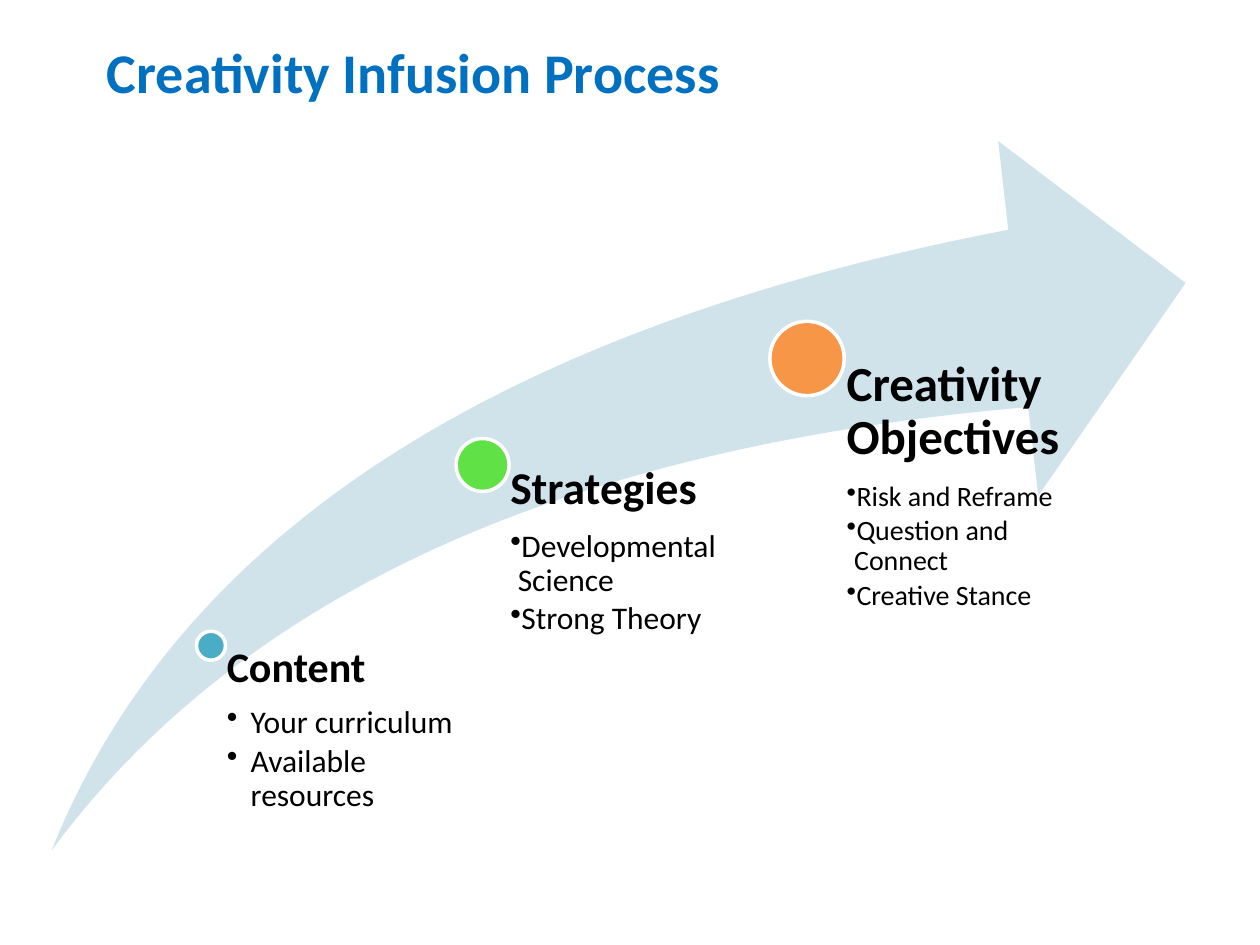
from dataclasses import dataclass

from lxml.etree import SubElement
from pptx import Presentation
from pptx.dml.color import RGBColor
from pptx.enum.shapes import MSO_SHAPE
from pptx.enum.text import MSO_AUTO_SIZE
from pptx.oxml.ns import qn
from pptx.util import Emu, Pt

PX = 9144  # EMU in one px, at 100 px to the inch
TEXT_BOTTOM = 675


@dataclass(frozen=True)
class Theme:
    font: str = "Calibri"
    title: str = "0070C0"
    text: str = "000000"
    arrow: str = "D0E3EA"
    outline: str = "FFFFFF"
    title_size: int = 32
    outline_width: int = 2


@dataclass(frozen=True)
class Stage:
    heading: str
    bullets: tuple[str, ...]
    left: int
    top: int
    diameter: int
    color: str
    text_width: int
    inset: int
    indent: int
    heading_size: int
    bullet_size: int


THEME = Theme()
STAGES = (
    Stage("Content", ("Your curriculum", "Available resources"),
          156, 501, 23, "4BACC6", 210, 12, 19, 24, 18),
    Stage("Strategies", ("Developmental Science", "Strong Theory"),
          362, 348, 42, "60E146", 216, 22, 6, 26, 18),
    Stage("Creativity Objectives",
          ("Risk and Reframe", "Question and Connect", "Creative Stance"),
          611, 255, 59, "F79646", 216, 31, 6, 28, 16),
)


def px(length: int) -> Emu:
    return Emu(length * PX)


def add_text(paragraph, text: str, *, size: int, color: str = THEME.text,
             bold: bool = False, space_after: int | None = None,
             indent: int | None = None) -> None:
    """Write one paragraph; space_after is a percentage, indent adds a bullet."""
    properties = paragraph._p.get_or_add_pPr()
    if space_after is not None:
        paragraph.line_spacing = 0.9
        paragraph.space_before = Pt(0)
        paragraph.space_after = Pt(0)
        spacing = properties.find(qn("a:spcAft"))
        spacing.clear()
        SubElement(spacing, qn("a:spcPct"), val=str(space_after * 1000))
    if indent is not None:
        paragraph.level = 1
        properties.set("marL", str(px(indent)))
        properties.set("indent", str(-px(indent)))
        SubElement(properties, qn("a:buChar"), char="•")
    run = paragraph.add_run()
    run.text = text
    run.font.name = THEME.font
    run.font.size = Pt(size)
    run.font.bold = bold
    run.font.color.rgb = RGBColor.from_string(color)


def add_filled_shape(slide, kind: MSO_SHAPE, left: int, top: int,
                     width: int, height: int, color: str):
    shape = slide.shapes.add_shape(kind, px(left), px(top), px(width), px(height))
    shape.shadow.inherit = False
    shape.fill.solid()
    shape.fill.fore_color.rgb = RGBColor.from_string(color)
    shape.line.fill.background()
    return shape


def add_title(slide, text: str) -> None:
    frame = slide.shapes.add_textbox(px(75), px(25), px(511), px(64)).text_frame
    frame.word_wrap = False
    frame.auto_size = MSO_AUTO_SIZE.SHAPE_TO_FIT_TEXT
    add_text(frame.paragraphs[0], text, size=THEME.title_size,
             color=THEME.title, bold=True)


def add_stage(slide, stage: Stage) -> None:
    # Dot on the arrow
    dot = add_filled_shape(slide, MSO_SHAPE.OVAL, stage.left, stage.top,
                           stage.diameter, stage.diameter, stage.color)
    dot.line.color.rgb = RGBColor.from_string(THEME.outline)
    dot.line.width = Pt(THEME.outline_width)

    # Text hangs from the centre of the dot
    radius = (stage.diameter + 1) // 2
    left, top = stage.left + radius, stage.top + radius
    frame = slide.shapes.add_textbox(px(left), px(top), px(stage.text_width),
                                     px(TEXT_BOTTOM - top)).text_frame
    frame.word_wrap = True
    frame.margin_left = px(stage.inset)
    frame.margin_top = frame.margin_right = frame.margin_bottom = 0
    add_text(frame.paragraphs[0], stage.heading, size=stage.heading_size,
             bold=True, space_after=35)
    for bullet in stage.bullets:
        add_text(frame.add_paragraph(), bullet, size=stage.bullet_size,
                 space_after=15, indent=stage.indent)


def main() -> None:
    presentation = Presentation()
    presentation.slide_width, presentation.slide_height = px(1000), px(750)
    slide = presentation.slides.add_slide(presentation.slide_layouts[6])

    add_title(slide, "Creativity Infusion Process")

    # Rising arrow behind the stages
    arrow = add_filled_shape(slide, MSO_SHAPE.SWOOSH_ARROW, 41, 112, 900, 563,
                             THEME.arrow)
    arrow.adjustments[0] = arrow.adjustments[1] = 0.25

    for stage in STAGES:
        add_stage(slide, stage)
    presentation.save("out.pptx")


if __name__ == "__main__":
    main()
